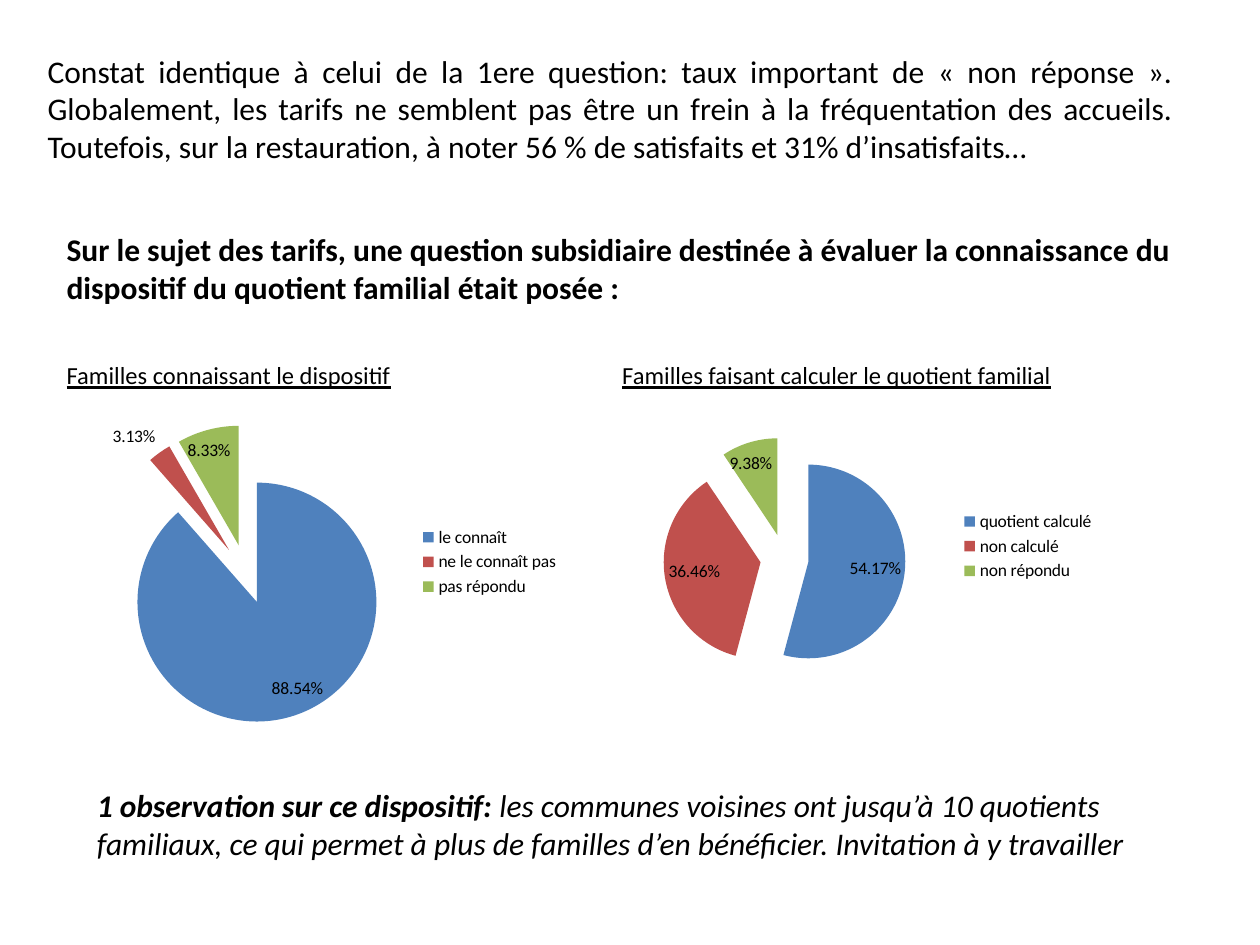
from dataclasses import dataclass

from lxml.etree import Element
from pptx import Presentation
from pptx.chart.data import CategoryChartData as ChartData
from pptx.dml.color import RGBColor as RGB
from pptx.enum.chart import XL_CHART_TYPE as Kind
from pptx.enum.chart import XL_LABEL_POSITION as Spot
from pptx.enum.chart import XL_LEGEND_POSITION as Side
from pptx.enum.text import MSO_AUTO_SIZE as Fit
from pptx.enum.text import PP_ALIGN as Align
from pptx.oxml.ns import qn
from pptx.util import Inches, Pt


@dataclass(frozen=True)
class Theme:
    font: str = "Calibri"
    ink: RGB = RGB(0, 0, 0)
    slices: tuple = (RGB(0x4F, 0x81, 0xBD), RGB(0xC0, 0x50, 0x4D), RGB(0x9B, 0xBB, 0x59))
    body: int = 18
    head: int = 14
    label: int = 10
    burst: int = 25


THEME = Theme()


def style(font, size):
    font.name = THEME.font
    font.size = Pt(size)
    font.color.rgb = THEME.ink


def add_text(slide, area, runs, size=THEME.body, align=Align.LEFT):
    """Each run is its text and the names of its font switches."""
    box = slide.shapes.add_textbox(*map(Inches, area))
    frame = box.text_frame
    frame.word_wrap = True
    frame.auto_size = Fit.SHAPE_TO_FIT_TEXT
    para = frame.paragraphs[0]
    para.alignment = align
    for text, *marks in runs:
        run = para.add_run()
        run.text = text
        style(run.font, size)
        for mark in marks:
            setattr(run.font, mark, True)


def add_pie(slide, area, shares):
    data = ChartData(number_format="0.00%")
    data.categories = list(shares)
    data.add_series("Familles", list(shares.values()))
    chart = slide.shapes.add_chart(Kind.PIE, *map(Inches, area), data).chart
    style(chart.font, THEME.label)
    chart.has_title = False
    chart.has_legend = True
    chart.legend.position = Side.RIGHT
    chart.legend.include_in_layout = False

    # Slice colours
    plot = chart.plots[0]
    plot.vary_by_categories = True
    series = plot.series[0]
    for i, color in enumerate(THEME.slices):
        fill = series.points[i].format.fill
        fill.solid()
        fill.fore_color.rgb = color

    # Pull the slices apart; the schema wants this before the points
    burst = Element(qn("c:explosion"), val=str(THEME.burst))
    series._element.find(qn("c:dPt")).addprevious(burst)

    # Value labels
    plot.has_data_labels = True
    labels = plot.data_labels
    labels.show_value = True
    labels.show_percentage = False
    labels.number_format = "0.00%"
    labels.number_format_is_linked = False
    labels.position = Spot.BEST_FIT
    style(labels.font, THEME.label)


def main():
    deck = Presentation()
    deck.slide_width, deck.slide_height = Inches(10), Inches(7.5)
    slide = deck.slides.add_slide(deck.slide_layouts[6])

    # Findings and question
    add_text(slide, (0.28, 0.36, 9.13, 1.01), [(
        "Constat identique à celui de la 1ere question: taux important de "
        "« non réponse ». Globalement, les tarifs ne semblent pas être un frein "
        "à la fréquentation des accueils. Toutefois, sur la restauration, "
        "à noter 56 % de satisfaits et 31% d’insatisfaits…",)], align=Align.JUSTIFY)
    add_text(slide, (0.43, 1.78, 8.98, 0.71), [(
        "Sur le sujet des tarifs, une question subsidiaire destinée à évaluer "
        "la connaissance du dispositif du quotient familial était posée :", "bold")])

    # Pies and their headings
    add_pie(slide, (0.47, 3.04, 4.07, 2.84),
            {"le connaît": 0.8854, "ne le connaît pas": 0.0313, "pas répondu": 0.0833})
    add_pie(slide, (4.83, 3.14, 3.96, 2.39),
            {"quotient calculé": 0.5417, "non calculé": 0.3646, "non répondu": 0.0938})
    add_text(slide, (0.43, 2.81, 3.15, 0.34),
             [("Familles connaissant le dispositif", "underline")], THEME.head)
    add_text(slide, (4.84, 2.81, 4.57, 0.34),
             [("Familles faisant calculer le quotient familial", "underline")], THEME.head)

    # Closing remark
    add_text(slide, (0.67, 6.19, 8.74, 0.71), [
        ("1 observation sur ce dispositif: ", "bold", "italic"),
        ("les communes voisines ont jusqu’à 10 quotients familiaux, ce qui permet "
         "à plus de familles d’en bénéficier. Invitation à y travailler", "italic")])

    deck.save("out.pptx")


if __name__ == "__main__":
    main()
